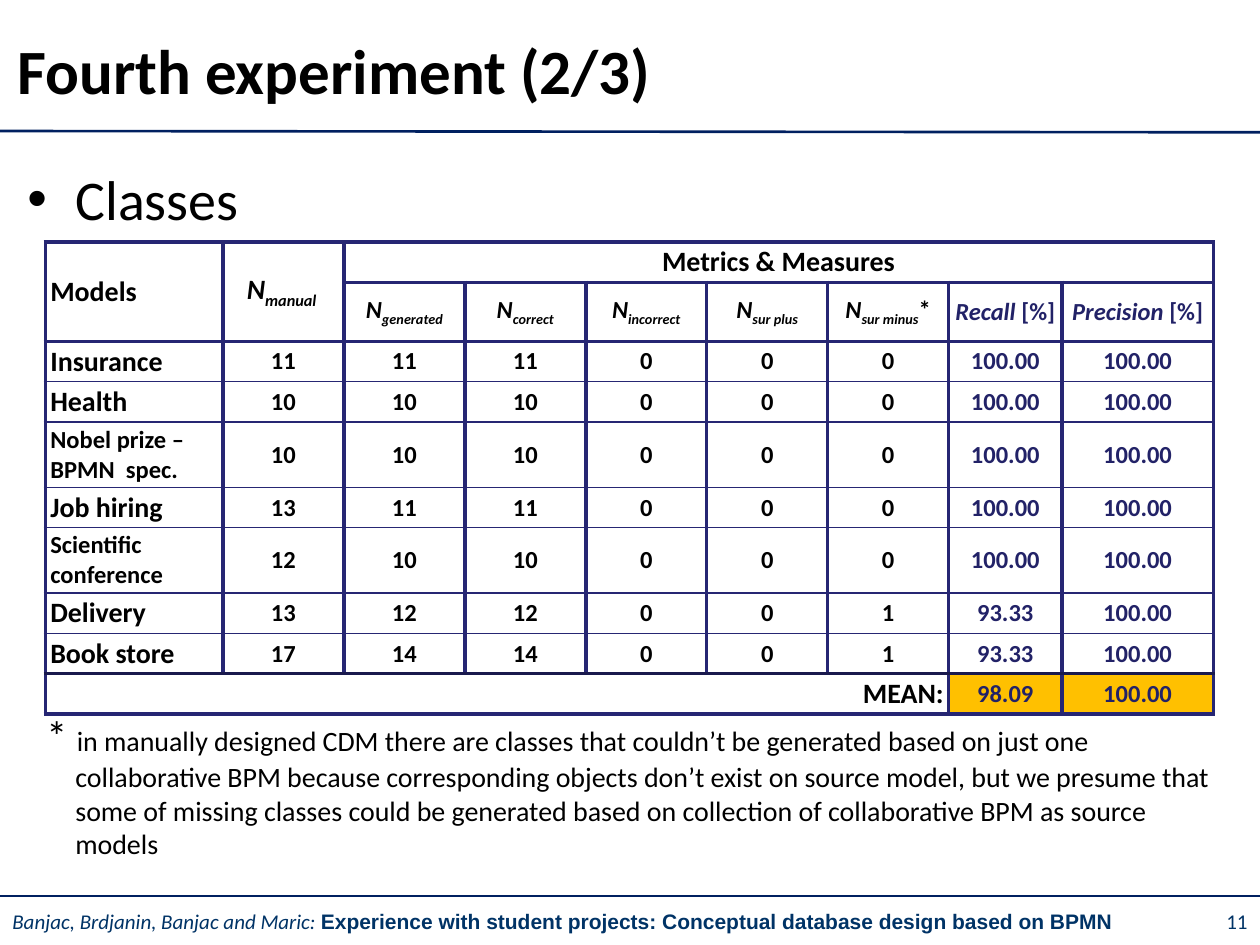
from lxml import etree
from pptx import Presentation
from pptx.dml.color import RGBColor
from pptx.enum.shapes import MSO_CONNECTOR
from pptx.enum.text import MSO_ANCHOR, PP_ALIGN
from pptx.oxml.ns import qn
from pptx.util import Inches, Pt

LEFT, CENTER, RIGHT = PP_ALIGN.LEFT, PP_ALIGN.CENTER, PP_ALIGN.RIGHT
TOP, MIDDLE = MSO_ANCHOR.TOP, MSO_ANCHOR.MIDDLE

BLACK, WHITE, AMBER = "000000", "FFFFFF", "FFC000"
NAVY, FOOTER_BLUE = "002060", "003366"
GRID, MEAN_RULE, MEASURE = "262673", "19194D", "222267"

TITLE = "Fourth experiment (2/3)"
BULLET = "Classes"
AUTHORS = "Banjac, Brdjanin, Banjac and Maric: "
TALK = "Experience with student projects: Conceptual database design based on BPMN"
PAGE = "11"
NOTE = ("in manually designed CDM there are classes that couldn’t be generated based on "
        "just one collaborative BPM because corresponding objects don’t exist on source "
        "model, but we presume that some of missing classes could be generated based on "
        "collection of collaborative BPM as source models")

COUNTS = ["generated", "correct", "incorrect", "sur plus", "sur minus"]
MEASURES = ["Recall ", "Precision "]
MODELS = [
    ("Insurance", 11, 11, 11, 0, 0, 0, "100.00", "100.00"),
    ("Health", 10, 10, 10, 0, 0, 0, "100.00", "100.00"),
    ("Nobel prize – BPMN  spec.", 10, 10, 10, 0, 0, 0, "100.00", "100.00"),
    ("Job hiring", 13, 11, 11, 0, 0, 0, "100.00", "100.00"),
    ("Scientific conference", 12, 10, 10, 0, 0, 0, "100.00", "100.00"),
    ("Delivery", 13, 12, 12, 0, 0, 1, "93.33", "100.00"),
    ("Book store", 17, 14, 14, 0, 0, 1, "93.33", "100.00"),
]
MEANS = ["98.09", "100.00"]

LONG_NAME = 15  # longer model names wrap and are set smaller
ROW, HEAD_ROW, WRAPPED_ROW = 0.32, 0.47, 0.52
COL_WIDTHS = [1.41] + [0.96] * 6 + [0.9, 1.2]
ROW_HEIGHTS = ([ROW, HEAD_ROW]
               + [WRAPPED_ROW if len(m[0]) > LONG_NAME else ROW for m in MODELS] + [ROW])
# horizontal rules from the top edge of the table to its bottom edge
RULES = ([(GRID, 2.25)] * 3 + [(GRID, 1)] * (len(MODELS) - 1)
         + [(MEAN_RULE, 2.25), (GRID, 2.25)])


def rgb(value):
    return RGBColor.from_string(value)


def add_run(p, text, size=14, color=BLACK, bold=False, italic=False,
            font="Calibri", baseline=0):
    r = p.add_run()
    r.text = text
    f = r.font
    f.name, f.size, f.bold, f.italic = font, Pt(size), bold, italic
    f.color.rgb = rgb(color)
    if baseline:
        r._r.get_or_add_rPr().set("baseline", str(baseline * 1000))


def add_text(s, box, runs, align=LEFT, anchor=MIDDLE, hang=None, bullet=None):
    """Add a text box; runs are (text, format) pairs, hang is (margin, indent)."""
    tf = s.shapes.add_textbox(*map(Inches, box)).text_frame
    tf.word_wrap, tf.vertical_anchor = True, anchor
    p = tf.paragraphs[0]
    p.alignment = align
    pPr = p._p.get_or_add_pPr()
    if hang:
        pPr.set("marL", str(Inches(hang[0])))
        pPr.set("indent", str(Inches(hang[1])))
    if bullet:
        etree.SubElement(pPr, qn("a:buFont"), typeface="Arial")
        etree.SubElement(pPr, qn("a:buChar"), char=bullet)
    for text, fmt in runs:
        add_run(p, text, **fmt)


def add_rule(s, x1, y1, x2, y2):
    line = s.shapes.add_connector(MSO_CONNECTOR.STRAIGHT, *map(Inches, (x1, y1, x2, y2)))
    line.line.color.rgb = rgb(NAVY)
    line.line.width = Pt(1.5)
    etree.SubElement(line._element.spPr, qn("a:effectLst"))


def format_cell(cell, row):
    """Give a cell its borders, white fill and margins."""
    side = (GRID, 2.25)
    tcPr = cell._tc.get_or_add_tcPr()
    borders = zip(("lnL", "lnR", "lnT", "lnB"), (side, side, RULES[row], RULES[row + 1]))
    for tag, (color, width) in borders:
        ln = etree.SubElement(tcPr, qn("a:" + tag), w=str(Pt(width)))
        etree.SubElement(etree.SubElement(ln, qn("a:solidFill")), qn("a:srgbClr"), val=color)
    cell.fill.solid()
    cell.fill.fore_color.rgb = rgb(WHITE)
    cell.vertical_anchor = MIDDLE
    cell.margin_left = cell.margin_right = Inches(0.04)
    cell.margin_top = cell.margin_bottom = Inches(0)


def write_cell(cell, *runs, align=CENTER):
    p = cell.text_frame.paragraphs[0]
    p.alignment = align
    for text, fmt in runs:
        add_run(p, text, **{"bold": True, **fmt})


def counter(name, size):
    return [("N", dict(size=size, italic=True)),
            (name, dict(size=size, italic=True, baseline=-25))]


def add_results(s):
    frame = s.shapes.add_table(len(ROW_HEIGHTS), len(COL_WIDTHS), Inches(0.36), Inches(1.92),
                               Inches(sum(COL_WIDTHS)), Inches(sum(ROW_HEIGHTS)))
    t = frame.table
    t.first_row = t.horz_banding = False
    for col, width in zip(t.columns, COL_WIDTHS):
        col.width = Inches(width)
    for i, (row, height) in enumerate(zip(t.rows, ROW_HEIGHTS)):
        row.height = Inches(height)
        for cell in row.cells:
            format_cell(cell, i)

    last = len(ROW_HEIGHTS) - 1
    for start, end in [((0, 0), (1, 0)), ((0, 1), (1, 1)), ((0, 2), (0, 8)),
                       ((last, 0), (last, 6))]:
        t.cell(*start).merge(t.cell(*end))

    large = dict(size=16)
    write_cell(t.cell(0, 0), ("Models", large), align=LEFT)
    write_cell(t.cell(0, 1), *counter("manual ", 16))
    write_cell(t.cell(0, 2), ("Metrics & Measures", large))
    for c, name in enumerate(COUNTS, 2):
        star = [("*", {})] if name == "sur minus" else []
        write_cell(t.cell(1, c), *counter(name, 14), *star)
    for c, name in enumerate(MEASURES, 7):
        write_cell(t.cell(1, c), (name, dict(color=MEASURE, italic=True)),
                   ("[%]", dict(color=MEASURE)))

    for i, (name, *values) in enumerate(MODELS, 2):
        size = 14 if len(name) > LONG_NAME else 16
        write_cell(t.cell(i, 0), (name, dict(size=size)), align=LEFT)
        for c, value in enumerate(values, 1):
            write_cell(t.cell(i, c), (str(value), dict(color=MEASURE if c > 6 else BLACK)))

    write_cell(t.cell(last, 0), ("MEAN:", large), align=RIGHT)
    for c, value in enumerate(MEANS, 7):
        cell = t.cell(last, c)
        cell.fill.fore_color.rgb = rgb(AMBER)
        write_cell(cell, (value, dict(color=MEASURE)))


def main():
    prs = Presentation()
    prs.slide_width, prs.slide_height = Inches(10), Inches(7.5)
    s = prs.slides.add_slide(prs.slide_layouts[6])

    footer = dict(size=12, color=FOOTER_BLUE)
    add_text(s, (0, 7.12, 9.53, 0.38), [(AUTHORS, dict(footer, italic=True)),
                                        (TALK, dict(footer, bold=True, font="Arial"))])
    add_rule(s, 0, 1.04, 10, 1.05)
    add_rule(s, 0, 7.11, 10, 7.11)
    add_text(s, (0.04, 0.16, 9.76, 0.78), [(TITLE, dict(size=36, bold=True))])
    add_text(s, (0.12, 1.26, 9.73, 0.64), [(BULLET, dict(size=32))],
             anchor=TOP, hang=(0.38, -0.38), bullet="•")
    add_text(s, (0.12, 5.58, 9.73, 1.4), [("* ", dict(size=24)), (NOTE, dict(size=16))],
             anchor=TOP, hang=(0.38, -0.23))
    add_text(s, (9.53, 7.12, 0.47, 0.38), [(PAGE, footer)], align=RIGHT)
    add_results(s)
    prs.save("out.pptx")


if __name__ == "__main__":
    main()
